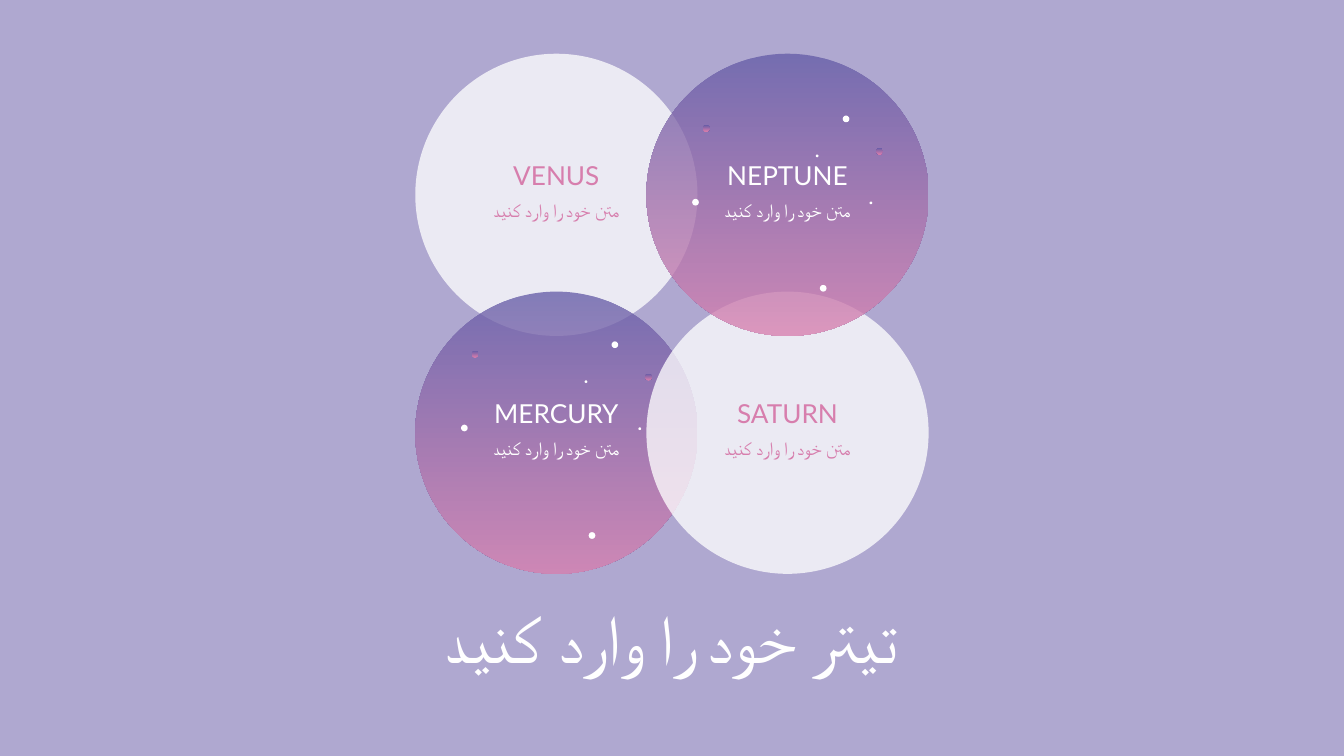
from lxml.etree import SubElement
from pptx import Presentation
from pptx.dml.color import RGBColor
from pptx.enum.shapes import MSO_SHAPE
from pptx.enum.text import MSO_ANCHOR, MSO_AUTO_SIZE, PP_ALIGN
from pptx.oxml.ns import qn
from pptx.util import Inches, Pt

WHITE, PINK, PURPLE, LAVENDER = "FFFFFF", "D77EAD", "645CA7", "AFA8D0"
GRADIENT = (PURPLE, PINK)
DIAMETER = 2.1
LEFT, RIGHT = 3.09, 4.81
TOP, BOTTOM = 0.4, 2.17
BODY = "متن خود را وارد کنید"
PLANETS = [
    ("VENUS", LEFT, TOP, (WHITE,), PINK),
    ("MERCURY", LEFT, BOTTOM, GRADIENT, WHITE),
    ("SATURN", RIGHT, BOTTOM, (WHITE,), PINK),
    ("NEPTUNE", RIGHT, TOP, GRADIENT, WHITE),
]
STARS = [
    (0.34, 1.08, 0.05, (WHITE,)),
    (1.46, 0.46, 0.05, (WHITE,)),
    (1.66, 1.1, 0.02, (WHITE,)),
    (1.71, 0.7, 0.05, GRADIENT),
    (0.42, 0.53, 0.05, GRADIENT),
    (1.26, 0.75, 0.02, (WHITE,)),
]
STAR_SHIFTS = {"NEPTUNE": (0, 1.72), "MERCURY": (-0.09, 1.88)}


def rgb(value):
    """Turn a hex string into a colour."""
    return RGBColor.from_string(value)


def add_circle(shapes, left, top, size, colors, opacity=100):
    """Add a circle filled with one colour or a downward gradient."""
    circle = shapes.add_shape(
        MSO_SHAPE.OVAL, Inches(left), Inches(top), Inches(size), Inches(size)
    )
    circle.shadow.inherit = False
    circle.line.fill.background()
    if len(colors) == 1:
        circle.fill.solid()
        circle.fill.fore_color.rgb = rgb(colors[0])
    else:
        circle.fill.gradient()
        circle.fill.gradient_angle = 270
        for stop, color in zip(circle.fill.gradient_stops, colors):
            stop.color.rgb = rgb(color)
    if opacity < 100:
        for color in circle._element.spPr.iter(qn("a:srgbClr")):
            SubElement(color, qn("a:alpha"), val=str(opacity * 1000))


def write_text(box, text, size, color, font="Lato", anchor=MSO_ANCHOR.BOTTOM):
    """Write one centred line into a box."""
    frame = box.text_frame
    frame.word_wrap = True
    frame.auto_size = MSO_AUTO_SIZE.NONE
    frame.vertical_anchor = anchor
    frame.margin_left = frame.margin_right = Inches(0.1)
    frame.margin_top = frame.margin_bottom = Inches(0.1)
    para = frame.paragraphs[0]
    para.alignment = PP_ALIGN.CENTER
    span = para.add_run()
    span.text = text
    span.font.size = Pt(size)
    span.font.color.rgb = rgb(color)
    span.font.name = font


def add_label(page, left, top, text, **style):
    """Add a planet label as a text box."""
    box = page.shapes.add_textbox(
        Inches(left), Inches(top), Inches(1.62), Inches(0.38)
    )
    write_text(box, text, **style)


def add_stars(page, left, top, lowest):
    """Scatter a group of stars over a planet."""
    group = page.shapes.add_group_shape()
    for across, down, size, colors in STARS + [(1.29, lowest, 0.05, (WHITE,))]:
        add_circle(group.shapes, left + across, top + down, size, colors)


def add_title(page, text):
    """Place and fill the title at the foot of the slide."""
    title = page.shapes.title
    title.left, title.top = Inches(0.98), Inches(4.51)
    title.width, title.height = Inches(8.03), Inches(0.63)
    write_text(title, text, size=36, color=WHITE)


def main():
    """Build the slide and save it."""
    deck = Presentation()
    deck.slide_width = Inches(10)
    deck.slide_height = deck.slide_width * 9 // 16
    page = deck.slides.add_slide(deck.slide_layouts[5])
    page.background.fill.solid()
    page.background.fill.fore_color.rgb = rgb(LAVENDER)
    for name, left, top, colors, ink in PLANETS:
        add_circle(page.shapes, left, top, DIAMETER, colors, opacity=76)
    for name, left, top, colors, ink in PLANETS:
        if name in STAR_SHIFTS:
            shift, lowest = STAR_SHIFTS[name]
            add_stars(page, left, top + shift, lowest)
        add_label(page, left + 0.24, top + 0.98, BODY, size=10, color=ink,
                  font="TeX Gyre Bonum", anchor=MSO_ANCHOR.TOP)
        add_label(page, left + 0.24, top + 0.74, name, size=14, color=ink)
    add_title(page, "تیتر خود را وارد کنید")
    deck.save("out.pptx")


if __name__ == "__main__":
    main()
